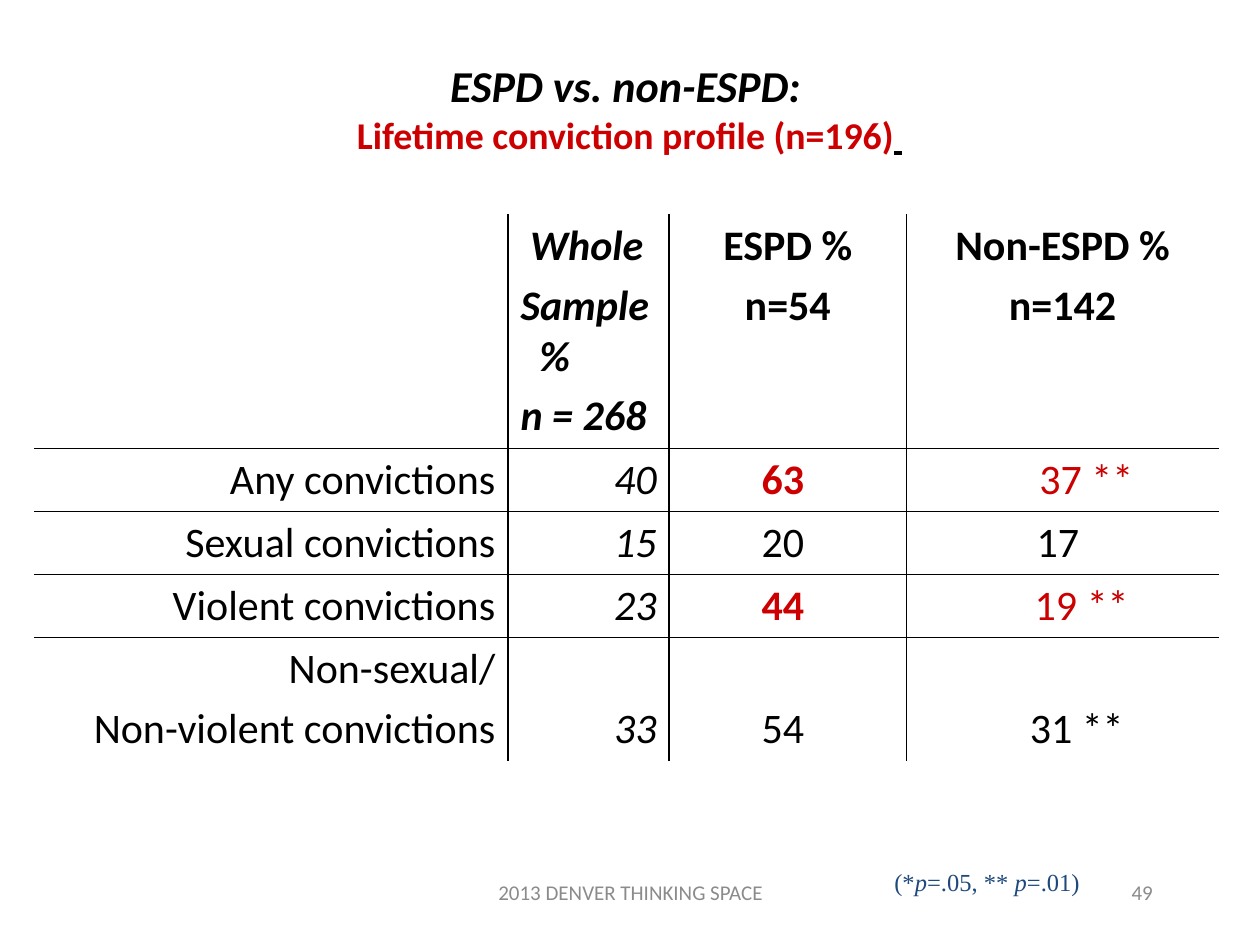
from lxml.etree import SubElement
from pptx import Presentation
from pptx.dml.color import RGBColor
from pptx.enum.text import MSO_ANCHOR, PP_ALIGN
from pptx.oxml import parse_xml
from pptx.oxml.ns import nsdecls
from pptx.util import Cm, Pt

BLACK = RGBColor(0x00, 0x00, 0x00)
RED = RGBColor(0xCC, 0x00, 0x00)
GREY = RGBColor(0x8B, 0x8B, 0x8B)
NAVY = RGBColor(0x1F, 0x49, 0x7D)
LEFT, CENTER, RIGHT = PP_ALIGN.LEFT, PP_ALIGN.CENTER, PP_ALIGN.RIGHT

COLUMN_WIDTHS = (9.55, 3.25, 4.78, 6.3)
ROW_HEIGHTS = (4.72, 1.27, 1.27, 1.27, 2.49)
COLUMN_ALIGNS = (RIGHT, RIGHT, CENTER, CENTER)

# Header cells: lines, italic, alignment
HEADERS = (
    ((), False, LEFT),
    ((" Whole", "Sample %", "n = 268"), True, LEFT),
    (("ESPD %", "n=54"), False, CENTER),
    (("Non-ESPD %", "n=142"), False, CENTER),
)
# Body rows: label lines, three values, significant, left indent of the last value
BODY = (
    (("Any convictions",), ("40", "63 ", "37 **"), True, 0.96),
    (("Sexual convictions",), ("15", "20 ", "17 "), False, 0),
    (("Violent convictions",), ("23", "44 ", "19 **"), True, 0.77),
    (("Non-sexual/", "Non-violent convictions"), ("33", "54 ", "31 **"), False, 0.57),
)


def add_span(para, text, size, color, font="Calibri", bold=False, italic=False,
             underline=False):
    span = para.add_run()
    span.text = text
    span.font.name = font
    span.font.size = Pt(size)
    span.font.color.rgb = color
    span.font.bold = bold
    span.font.italic = italic
    span.font.underline = underline


def add_text_box(page, left, top, width, height, align, wrap=True):
    """Add a vertically centred text box and return its frame."""
    frame = page.shapes.add_textbox(Cm(left), Cm(top), Cm(width), Cm(height)).text_frame
    frame.word_wrap = wrap
    frame.vertical_anchor = MSO_ANCHOR.MIDDLE
    frame.paragraphs[0].alignment = align
    return frame


def indent_para(para, left, first=0):
    properties = para._p.get_or_add_pPr()
    properties.set("marL", str(Cm(left)))
    properties.set("indent", str(Cm(first)))


def fill_cell(cell, lines, align, color=BLACK, bold=False, italic=False):
    """Write one paragraph per line and return the paragraphs."""
    frame = cell.text_frame
    for index, line in enumerate(lines):
        para = frame.add_paragraph() if index else frame.paragraphs[0]
        para.alignment = align
        para.space_before = Pt(4.8)
        add_span(para, line, 24, color, bold=bold, italic=italic)
    return frame.paragraphs


def draw_inner_borders(table):
    """Rule only the lines between cells, leaving the outer edge open."""
    last_row, last_column = len(table.rows) - 1, len(table.columns) - 1
    for row in range(last_row + 1):
        for column in range(last_column + 1):
            cell = table.cell(row, column)
            cell.fill.background()
            properties = cell._tc.get_or_add_tcPr()
            sides = (("lnL", column > 0), ("lnR", column < last_column),
                     ("lnT", row > 0), ("lnB", row < last_row))
            for index, (side, ruled) in enumerate(sides):
                line = parse_xml(f'<a:{side} {nsdecls("a")} w="{Pt(1)}"/>')
                namespace = "{" + line.nsmap["a"] + "}"
                if ruled:
                    fill = SubElement(line, namespace + "solidFill")
                    SubElement(fill, namespace + "srgbClr", val=str(BLACK))
                else:
                    SubElement(line, namespace + "noFill")
                properties.insert(index, line)


def add_title(page, left, top, width, height):
    frame = add_text_box(page, left, top, width, height, CENTER)
    frame.margin_bottom = Cm(0.89)
    para = frame.paragraphs[0]
    add_span(para, "ESPD vs. non-ESPD:", 25.2, BLACK, bold=True, italic=True)
    add_span(para, " ", 21.6, BLACK, bold=True)
    para.add_line_break()
    add_span(para, "Lifetime conviction profile (n=196)", 21.6, RED, bold=True)
    add_span(para, " ", 21.6, BLACK, bold=True, underline=True)


def add_conviction_table(page, left, top):
    table = page.shapes.add_table(
        len(ROW_HEIGHTS), len(COLUMN_WIDTHS), Cm(left), Cm(top),
        Cm(sum(COLUMN_WIDTHS)), Cm(sum(ROW_HEIGHTS))).table
    table.first_row = table.horz_banding = False
    for column, width in zip(table.columns, COLUMN_WIDTHS):
        column.width = Cm(width)
    for row, height in zip(table.rows, ROW_HEIGHTS):
        row.height = Cm(height)

    # Header row
    for column, (lines, italic, align) in enumerate(HEADERS):
        fill_cell(table.cell(0, column), lines, align, bold=True, italic=italic)
    # The percent sign wraps onto a hanging indent
    indent_para(table.cell(0, 1).text_frame.paragraphs[1], 0.38, -0.38)

    # Body rows
    for row, (label, values, significant, indent) in enumerate(BODY, start=1):
        fill_cell(table.cell(row, 0), label, RIGHT)
        for column, value in enumerate(values, start=1):
            cell = table.cell(row, column)
            if len(label) > 1:
                cell.vertical_anchor = MSO_ANCHOR.BOTTOM
            paras = fill_cell(
                cell, (value,), COLUMN_ALIGNS[column],
                color=RED if significant and column > 1 else BLACK,
                bold=significant and column == 2, italic=column == 1)
            if column == 3 and indent:
                indent_para(paras[0], indent)
    draw_inner_borders(table)


def add_footer(page, top, height):
    # Event name and page number
    for text, left, width, align in (
            ("2013 DENVER THINKING SPACE", 8.69, 8.05, CENTER),
            ("49", 18.21, 5.28, RIGHT)):
        frame = add_text_box(page, left, top, width, height, align)
        add_span(frame.paragraphs[0], text, 12, GREY)

    # Significance key
    frame = add_text_box(page, 17.78, top, 4.24, 0.85, LEFT, wrap=False)
    for text, italic in (("(*", False), ("p", True), ("=.05, ** ", False),
                         ("p", True), ("=.01)", False)):
        add_span(frame.paragraphs[0], text, 14, NAVY, "Times New Roman", italic=italic)


def main():
    deck = Presentation()
    deck.slide_width, deck.slide_height = Cm(25.4), Cm(19.05)
    page = deck.slides.add_slide(deck.slide_layouts[6])
    add_title(page, 1.9, 1.7, 21.59, 1.7)
    add_conviction_table(page, 0.69, 4.32)
    add_footer(page, 17.35, 1.27)
    deck.save("out.pptx")


if __name__ == "__main__":
    main()
